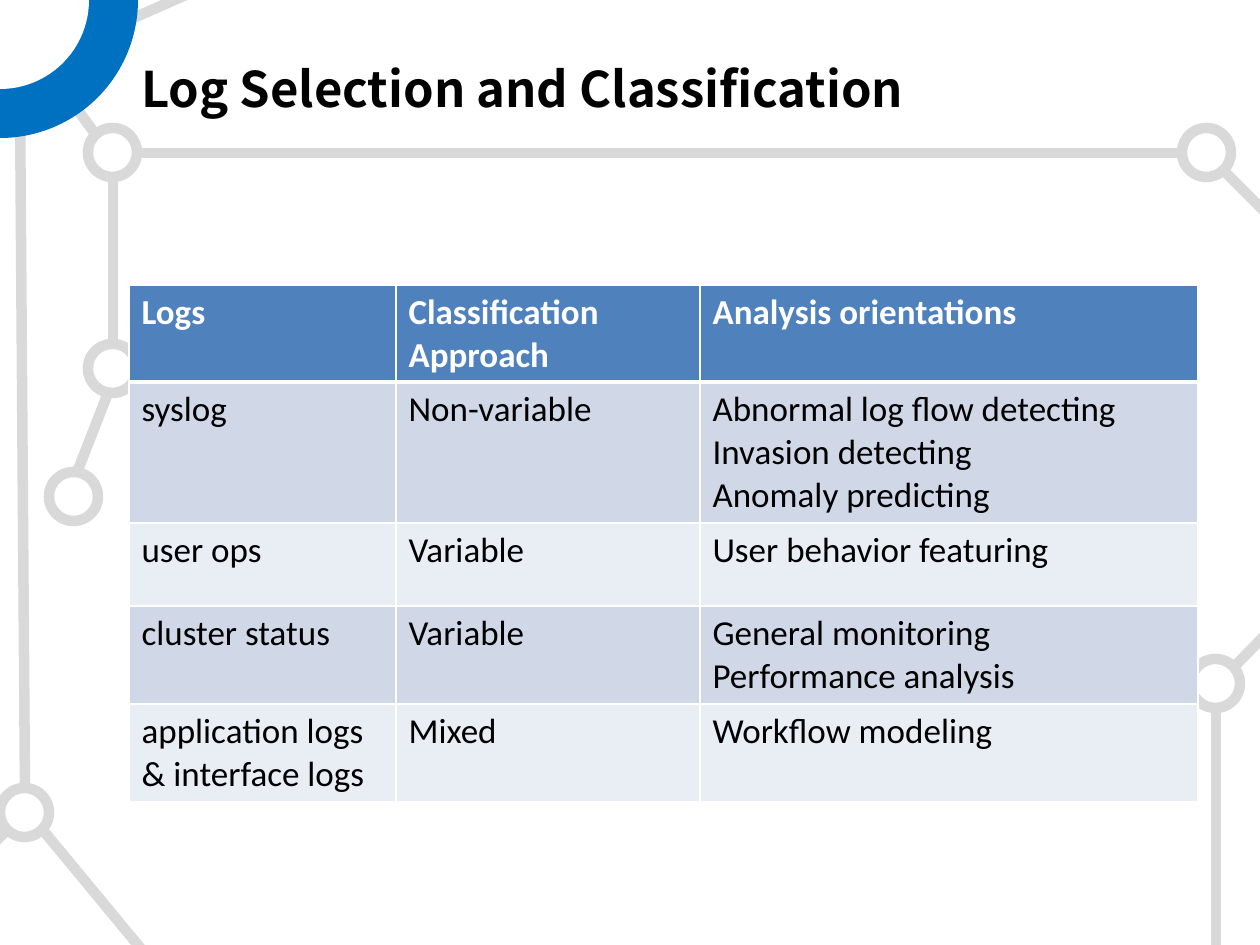
from lxml import etree
from pptx import Presentation
from pptx.dml.color import RGBColor
from pptx.enum.shapes import MSO_CONNECTOR as Connector, MSO_SHAPE as Shape
from pptx.enum.text import MSO_ANCHOR as Anchor
from pptx.oxml.ns import qn
from pptx.util import Emu, Pt

PX = 914400 // 126
WHITE = RGBColor(0xFF, 0xFF, 0xFF)
BLACK = RGBColor(0x00, 0x00, 0x00)
GRAY = RGBColor(0xD9, 0xD9, 0xD9)
BLUE = RGBColor(0x00, 0x70, 0xC0)
HEADER = RGBColor(0x4F, 0x81, 0xBD)
BANDS = RGBColor(0xD0, 0xD8, 0xE8), RGBColor(0xE9, 0xED, 0xF4)

TITLE_FONT = {"name": "Noto Sans CJK SC", "size": Pt(28), "bold": True}
HEADER_FONT = {"name": "Calibri", "size": Pt(20), "bold": True}
BODY_FONT = HEADER_FONT | {"bold": False}

TRACES = [
    (129, 20, 197, -10), (20, 98, 25, 788), (69, 98, 96, 135),
    (137, 153, 1182, 153), (113, 178, 113, 345), (-20, 857, 8, 829),
    (42, 829, 147, 956), (1223, 170, 1270, 217), (108, 393, 78, 470),
    (1280, 620, 1234, 667), (1216, 709, 1216, 945),
]
NODES = [(88, 128), (1182, 128), (0, 788), (88, 344), (49, 472), (1191, 659)]
NODE_SIZE = 49
COLUMNS = [267, 304, 498]
ROW_HEIGHTS = [97, 141, 83, 98, 98]
ROWS = [
    ("Logs", "Classification Approach", "Analysis orientations"),
    ("syslog", "Non-variable",
     "Abnormal log flow detecting\nInvasion detecting\nAnomaly predicting"),
    ("user ops", "Variable", "User behavior featuring"),
    ("cluster status", "Variable", "General monitoring\nPerformance analysis"),
    ("application logs & interface logs", "Mixed", "Workflow modeling"),
]


def lengths(*values):
    return [Emu(value * PX) for value in values]


class SlideBuilder:
    def __init__(self, slide):
        self.slide = slide
        self.shapes = slide.shapes

    def fill_text(self, frame, text, style, color):
        frame.text = text
        for paragraph in frame.paragraphs:
            for run in paragraph.runs:
                for name, value in style.items():
                    setattr(run.font, name, value)
                run.font.color.rgb = color

    def trace(self, *ends):
        line = self.shapes.add_connector(Connector.STRAIGHT, *lengths(*ends))
        line.line.color.rgb = GRAY
        line.line.width = Pt(6)
        etree.SubElement(line._element.spPr, qn("a:effectLst"))

    def preset(self, kind, box, fill):
        shape = self.shapes.add_shape(kind, *lengths(*box))
        shape.shadow.inherit = False
        shape.fill.solid()
        shape.fill.fore_color.rgb = fill
        return shape

    def node(self, left, top):
        shape = self.preset(Shape.OVAL, (left, top, NODE_SIZE, NODE_SIZE), WHITE)
        shape.line.color.rgb = GRAY
        shape.line.width = Pt(6)

    def corner(self, radius, fill):
        box = (-radius, -radius, 2 * radius, 2 * radius)
        shape = self.preset(Shape.PIE, box, fill)
        shape.adjustments[0] = 0
        shape.adjustments[1] = 54
        shape.line.fill.background()

    def title(self, box, text):
        frame = self.shapes.add_textbox(*lengths(*box)).text_frame
        frame.word_wrap = True
        frame.vertical_anchor = Anchor.MIDDLE
        self.fill_text(frame, text, TITLE_FONT, BLACK)

    def borders(self, cell, bottom):
        properties = cell._tc.get_or_add_tcPr()
        for side, width in (("L", 1), ("R", 1), ("T", 1), ("B", bottom)):
            edge = etree.SubElement(properties, qn(f"a:ln{side}"), w=str(Pt(width)))
            fill = etree.SubElement(edge, qn("a:solidFill"))
            etree.SubElement(fill, qn("a:srgbClr"), val=str(WHITE))

    def table(self, left, top):
        box = lengths(left, top, sum(COLUMNS), sum(ROW_HEIGHTS))
        table = self.shapes.add_table(len(ROWS), len(COLUMNS), *box).table
        for column, width in zip(table.columns, lengths(*COLUMNS)):
            column.width = width
        for index, height in enumerate(lengths(*ROW_HEIGHTS)):
            table.rows[index].height = height
            header = index == 0
            for cell, text in zip(table.rows[index].cells, ROWS[index]):
                self.borders(cell, 3 if index == 0 else 1)
                cell.fill.solid()
                cell.fill.fore_color.rgb = HEADER if header else BANDS[(index - 1) % 2]
                style = HEADER_FONT if header else BODY_FONT
                self.fill_text(cell.text_frame, text, style, WHITE if header else BLACK)


def main():
    presentation = Presentation()
    presentation.slide_width, presentation.slide_height = lengths(1260, 945)
    builder = SlideBuilder(presentation.slides.add_slide(presentation.slide_layouts[6]))
    for ends in TRACES:
        builder.trace(*ends)
    for position in NODES:
        builder.node(*position)
    builder.corner(138, BLUE)
    builder.corner(89, WHITE)
    builder.title((129, 38, 1068, 99), "Log Selection and Classification")
    builder.table(129, 285)
    presentation.save("out.pptx")


if __name__ == "__main__":
    main()
